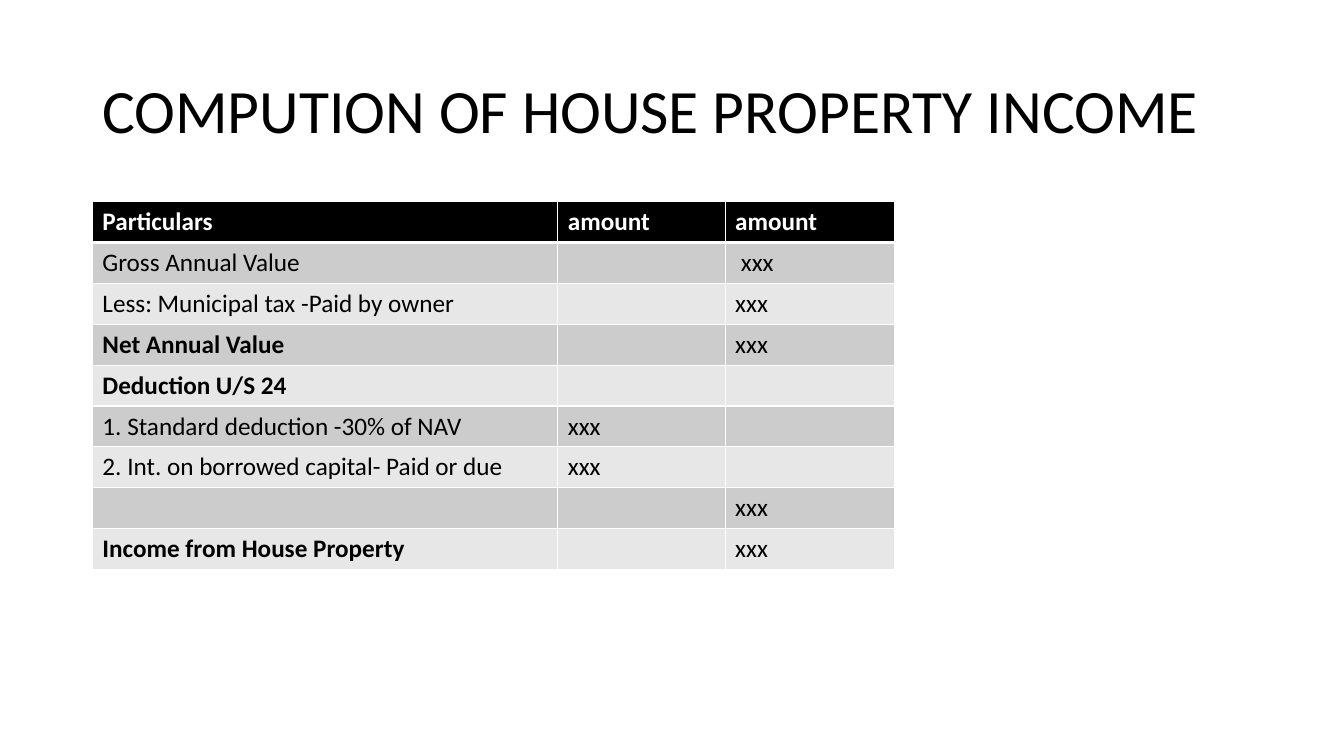
from lxml.etree import SubElement
from pptx import Presentation
from pptx.dml.color import RGBColor
from pptx.enum.text import MSO_ANCHOR
from pptx.oxml.ns import qn
from pptx.util import Pt

# Content
TITLE = "COMPUTION OF HOUSE PROPERTY INCOME"
ROWS = [
    ("Particulars", "amount", "amount"),
    ("Gross Annual Value", "", " xxx"),
    ("Less: Municipal tax -Paid by owner", "", "xxx"),
    ("Net Annual Value", "", "xxx"),
    ("Deduction U/S 24", "", ""),
    ("1. Standard deduction -30% of NAV", "xxx", ""),
    ("2. Int. on borrowed capital- Paid or due", "xxx", ""),
    ("", "", "xxx"),
    ("Income from House Property", "", "xxx"),
]
BOLD_LABELS = {"Net Annual Value", "Deduction U/S 24", "Income from House Property"}

# Style and layout, in points
FONT = "Calibri"
COLORS = {"text": "000000", "header": "000000", "header_text": "FFFFFF",
          "odd": "CCCCCC", "even": "E7E7E7", "border": "FFFFFF"}
LEFT, TABLE_TOP = 66, 144
COLUMN_WIDTHS = (332.5, 119.5, 121)
ROW_HEIGHT = 29.2


def color(name):
    return RGBColor.from_string(COLORS[name])


def add_text(paragraph, text, size, color_name, bold=False):
    run = paragraph.add_run()
    run.text = text
    run.font.name = FONT
    run.font.size = Pt(size)
    run.font.bold = bold
    run.font.color.rgb = color(color_name)


def set_borders(cell, widths):
    """Draw left, right, top and bottom lines, placed ahead of the fill."""
    properties = cell._tc.get_or_add_tcPr()
    for index, (side, width) in enumerate(zip("LRTB", widths)):
        line = SubElement(properties, qn(f"a:ln{side}"), w=str(Pt(width)))
        fill = SubElement(line, qn("a:solidFill"))
        SubElement(fill, qn("a:srgbClr"), val=COLORS["border"])
        properties.insert(index, line)


def add_title(slide):
    frame = slide.shapes.add_textbox(Pt(LEFT), Pt(28.75), Pt(828), Pt(104.4)).text_frame
    frame.word_wrap = True
    frame.vertical_anchor = MSO_ANCHOR.MIDDLE
    paragraph = frame.paragraphs[0]
    paragraph.line_spacing = 0.9
    add_text(paragraph, TITLE, 44, "text")


def add_income_table(slide):
    table = slide.shapes.add_table(
        len(ROWS), len(COLUMN_WIDTHS), Pt(LEFT), Pt(TABLE_TOP),
        Pt(sum(COLUMN_WIDTHS)), Pt(ROW_HEIGHT * len(ROWS))).table
    for column, width in zip(table.columns, COLUMN_WIDTHS):
        column.width = Pt(width)
    for row_index, values in enumerate(ROWS):
        table.rows[row_index].height = Pt(ROW_HEIGHT)
        header = row_index == 0
        fill_name = "header" if header else ("even", "odd")[row_index % 2]
        for column_index, value in enumerate(values):
            cell = table.cell(row_index, column_index)
            cell.fill.solid()
            cell.fill.fore_color.rgb = color(fill_name)
            set_borders(cell, (1, 1, 3 if row_index == 1 else 1, 3 if header else 1))
            paragraph = cell.text_frame.paragraphs[0]
            if value:
                add_text(paragraph, value, 18, "header_text" if header else "text",
                         header or value in BOLD_LABELS)
            else:
                paragraph.font.size = Pt(18)


def main():
    presentation = Presentation()
    presentation.slide_width, presentation.slide_height = Pt(960), Pt(540)
    slide = presentation.slides.add_slide(presentation.slide_layouts[6])
    add_title(slide)
    add_income_table(slide)
    presentation.save("out.pptx")


if __name__ == "__main__":
    main()
